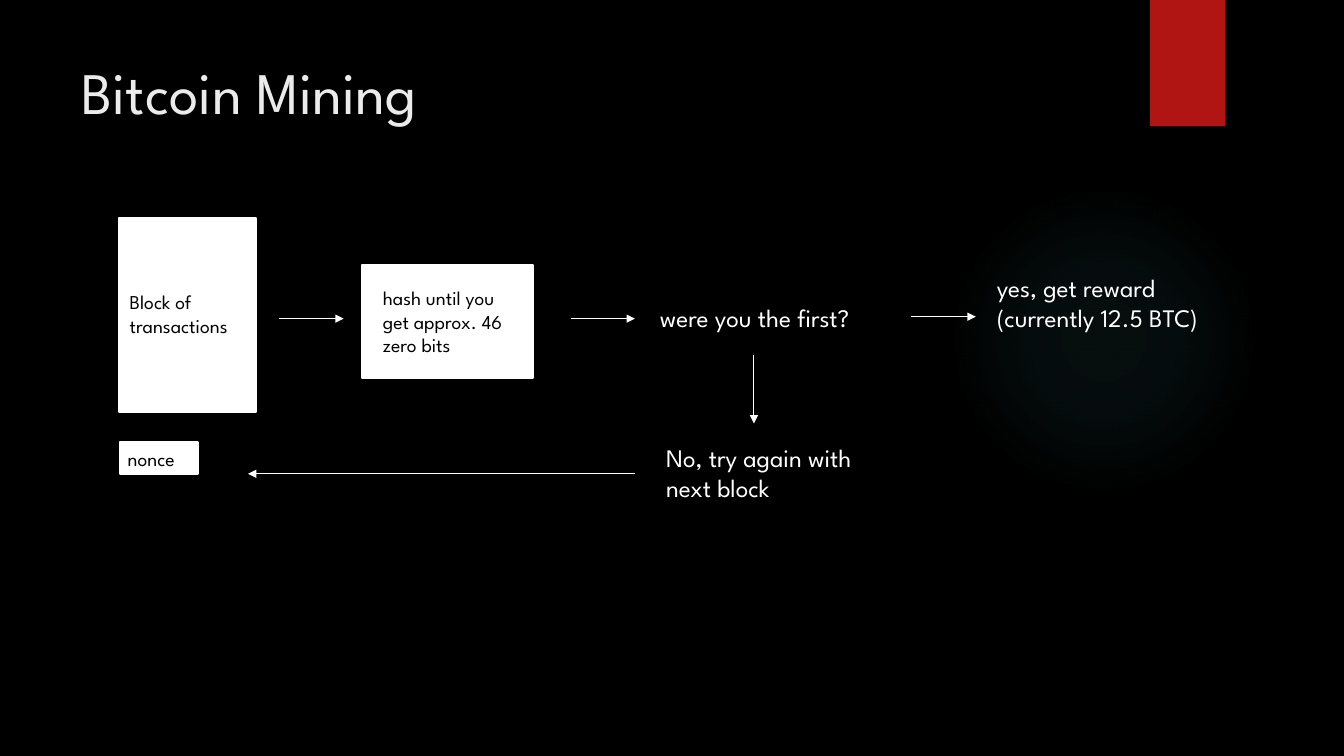
"""Build the Bitcoin mining flow slide."""
from dataclasses import dataclass

from pptx import Presentation
from pptx import oxml
from pptx import util as u
from pptx.dml.color import RGBColor
from pptx.enum import shapes, text
from pptx.oxml import ns


@dataclass(frozen=True)
class Theme:
    font: str = "League Spartan"
    background: str = "000000"
    light: str = "FFFFFF"
    dark: str = "000000"
    title: str = "EBEBEB"
    banner: str = "B01513"
    glow: str = "50B9C1"
    title_size: int = 42
    body_size: int = 18
    box_size: int = 14
    outline: float = 1.5
    arrow: float = 0.75


THEME = Theme()
BOXES = [
    (3, 5.49, 3.45, 4.9),
    (3.02, 11.13, 1.96, 0.81),
    (9.12, 6.68, 4.32, 2.84),
]
BOX_LABELS = [
    ("Block of\ntransactions", (3.02, 7.19, 3.43, 1.45), False),
    ("nonce", (2.97, 11.13, 2.08, 0.86), False),
    ("hash until you get approx. 46 zero bits", (9.4, 7.09, 4.04, 2.06), True),
]
STEPS = [
    ("were you the first?", (16.38, 7.49, 6.15, 1.02), False),
    ("yes, get reward (currently 12.5 BTC)", (24.87, 6.73, 5.64, 2.57), True),
    ("No, try again with next block", (16.54, 11.02, 5.84, 1.8), True),
]
ARROWS = [
    (7.04, 8.03, 8.66, 8.03),
    (14.38, 8.03, 16, 8.03),
    (22.96, 7.98, 24.59, 7.98),
    (19, 8.94, 19, 10.67),
    (16, 11.94, 6.25, 11.94),
]
GLOW_STOPS = [(0, 7), (36, 6), (69, 0)]


def lengths(values):
    return [u.Cm(value) for value in values]


def apply(target, formats):
    for name, value in formats.items():
        setattr(target, name, value)


def style_text(frame, size, color):
    for paragraph in frame.paragraphs:
        paragraph.alignment = text.PP_ALIGN.LEFT
        apply(paragraph.font, {"name": THEME.font, "size": u.Pt(size)})
        paragraph.font.color.rgb = RGBColor.from_string(color)


def add_title(slide, words, place):
    title = slide.shapes.title
    apply(title, dict(zip(("left", "top", "width", "height"), lengths(place))))
    frame = title.text_frame
    frame.text = words
    apply(frame, {
        "vertical_anchor": text.MSO_ANCHOR.TOP,
        "auto_size": text.MSO_AUTO_SIZE.NONE,
    })
    style_text(frame, THEME.title_size, THEME.title)


def add_block(slide, place, fill, outline=None, kind=shapes.MSO_SHAPE.RECTANGLE):
    shape = slide.shapes.add_shape(kind, *lengths(place))
    shape.shadow.inherit = False
    shape.fill.solid()
    shape.fill.fore_color.rgb = RGBColor.from_string(fill)
    if outline:
        shape.line.color.rgb = RGBColor.from_string(outline)
        shape.line.width = u.Pt(THEME.outline)
    else:
        shape.line.fill.background()
    return shape


def add_glow(slide, place):
    shape = add_block(slide, place, THEME.glow, kind=shapes.MSO_SHAPE.OVAL)
    stops = "".join(
        f'<a:gs pos="{position * 1000}"><a:srgbClr val="{THEME.glow}">'
        f'<a:alpha val="{alpha * 1000}"/></a:srgbClr></a:gs>'
        for position, alpha in GLOW_STOPS
    )
    gradient = oxml.parse_xml(
        f'<a:gradFill {ns.nsdecls("a")}><a:gsLst>{stops}</a:gsLst>'
        '<a:path path="circle"><a:fillToRect l="50000" t="50000" r="50000" b="50000"/>'
        '</a:path></a:gradFill>'
    )
    properties = shape._element.spPr
    properties.replace(properties.find(ns.qn("a:solidFill")), gradient)


def add_label(slide, words, place, wrap, size, color):
    frame = slide.shapes.add_textbox(*lengths(place)).text_frame
    frame.text = words
    apply(frame, {
        "word_wrap": wrap,
        "auto_size": text.MSO_AUTO_SIZE.SHAPE_TO_FIT_TEXT,
    })
    style_text(frame, size, color)


def add_arrow(slide, ends):
    arrow = slide.shapes.add_connector(shapes.MSO_CONNECTOR.STRAIGHT, *lengths(ends))
    arrow.line.color.rgb = RGBColor.from_string(THEME.light)
    arrow.line.width = u.Pt(THEME.arrow)
    head = oxml.parse_xml(f'<a:tailEnd {ns.nsdecls("a")} type="triangle"/>')
    arrow.line._get_or_add_ln().append(head)
    arrow._element.spPr.append(oxml.parse_xml(f'<a:effectLst {ns.nsdecls("a")}/>'))


def main():
    presentation = Presentation()
    apply(presentation, {"slide_width": u.Cm(33.87), "slide_height": u.Cm(19.05)})
    slide = presentation.slides.add_slide(presentation.slide_layouts[5])
    slide.background.fill.solid()
    slide.background.fill.fore_color.rgb = RGBColor.from_string(THEME.background)

    add_glow(slide, (23.9, 4.65, 7.82, 7.82))
    add_block(slide, (28.98, 0, 1.9, 3.18), THEME.banner)
    add_title(slide, "Bitcoin Mining", (1.8, 1.27, 26.14, 3.89))
    for place in BOXES:
        add_block(slide, place, THEME.light, THEME.light)
    for words, place, wrap in BOX_LABELS:
        add_label(slide, words, place, wrap, THEME.box_size, THEME.dark)
    for words, place, wrap in STEPS:
        add_label(slide, words, place, wrap, THEME.body_size, THEME.light)
    for ends in ARROWS:
        add_arrow(slide, ends)
    presentation.save("out.pptx")


if __name__ == "__main__":
    main()
